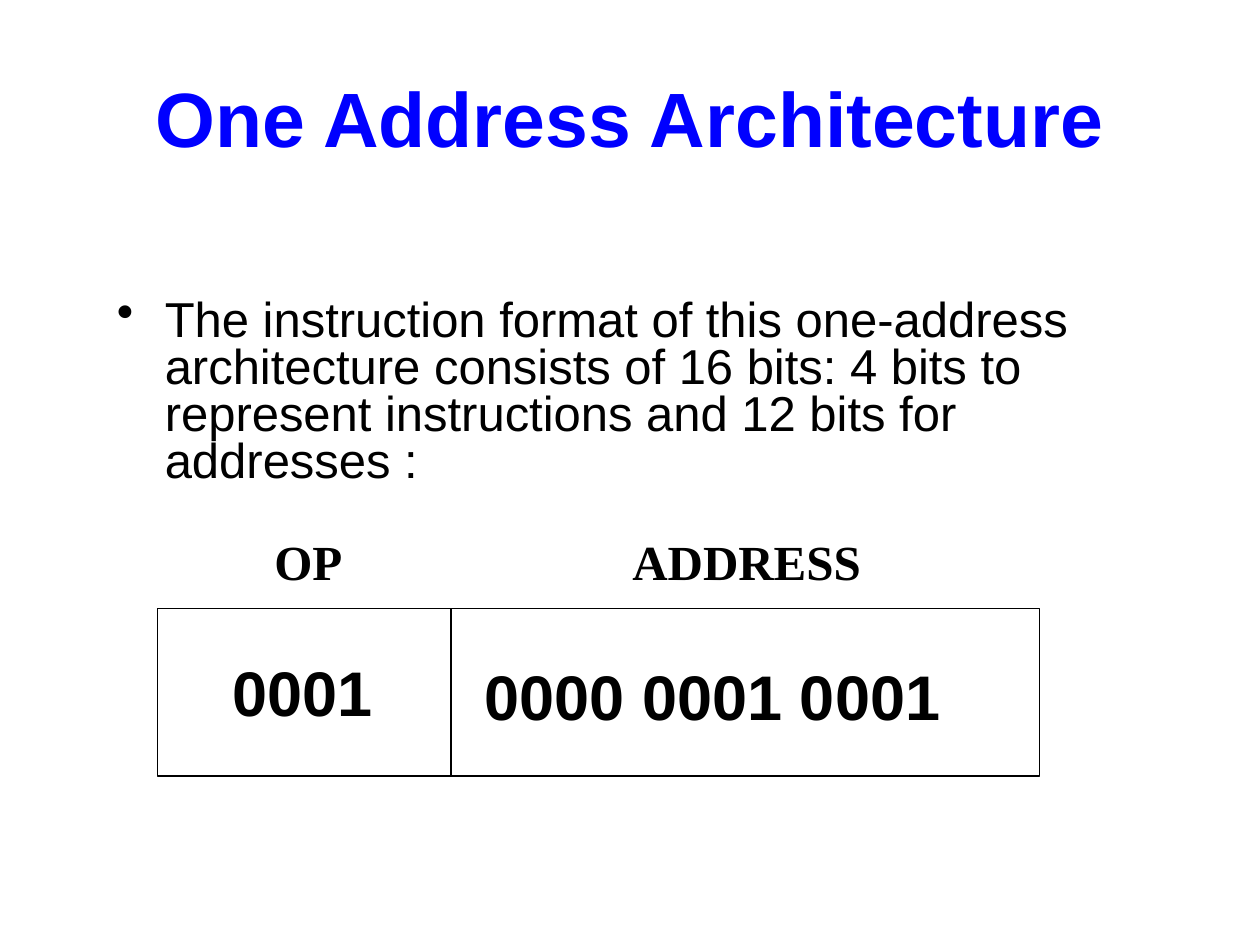
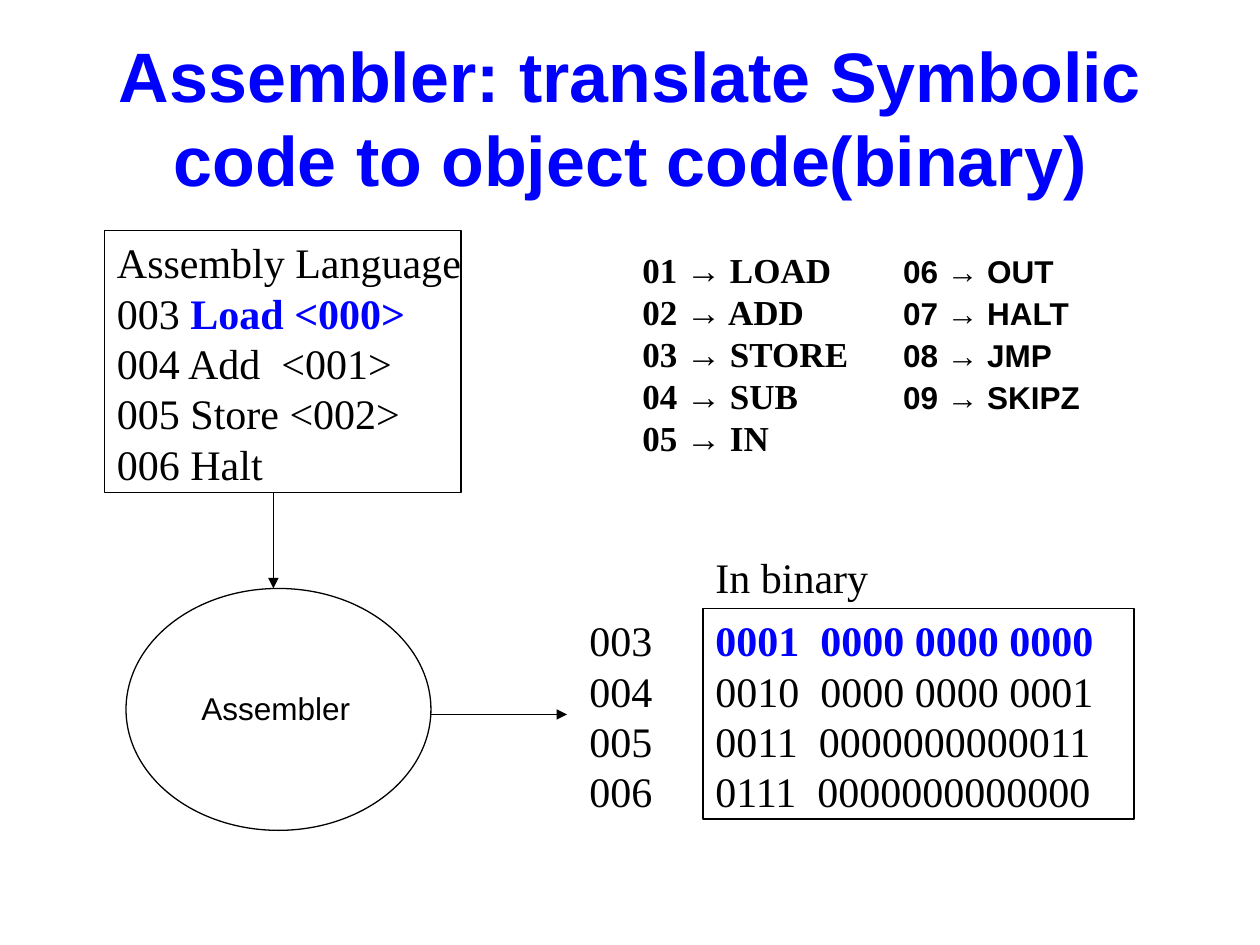
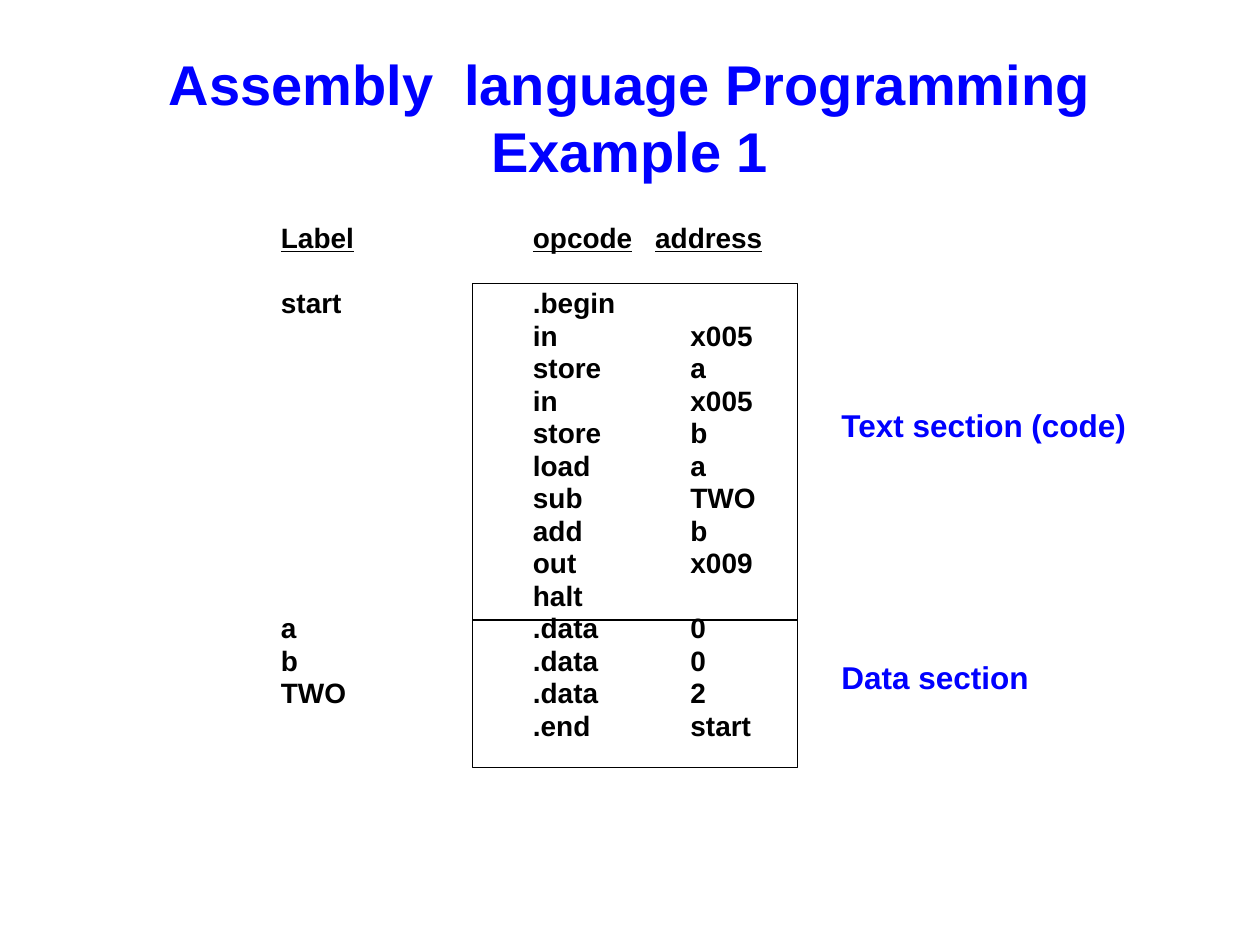
"""Build three slides on one-address architecture and its assembler."""

from dataclasses import dataclass

from lxml.etree import SubElement
from pptx import Presentation
from pptx.dml.color import RGBColor
from pptx.enum.shapes import MSO_CONNECTOR, MSO_SHAPE
from pptx.enum.text import MSO_ANCHOR, PP_ALIGN
from pptx.oxml.ns import qn
from pptx.util import Inches, Pt


@dataclass(frozen=True)
class Theme:
    sans: str = "Arial"
    serif: str = "Times New Roman"
    black: RGBColor = RGBColor(0, 0, 0)
    blue: RGBColor = RGBColor(0, 0, 255)
    white: RGBColor = RGBColor(255, 255, 255)
    line_width: float = 0.75
    line_spacing: float = 0.8
    word: int = 36
    body: int = 28
    code: int = 24
    opcode: int = 20
    label: int = 18
    listing: int = 16


theme = Theme()


def add_text(slide, box, lines, size, font=theme.sans, color=theme.black,
             bold=False, wrap=False, tabs=(), bullet=None):
    """Add a text box whose lines are tuples of runs and return its frame."""
    frame = slide.shapes.add_textbox(*map(Inches, box)).text_frame
    frame.word_wrap = wrap
    for index, line in enumerate(lines):
        paragraph = frame.paragraphs[0] if index == 0 else frame.add_paragraph()
        for text in line:
            paragraph.add_run().text = text
        properties = paragraph._p.get_or_add_pPr()
        if bullet:
            properties.set("marL", str(Inches(0.38)))
            properties.set("indent", str(-Inches(0.38)))
            SubElement(properties, qn("a:buChar"), char=bullet)
        if tabs:
            tab_list = SubElement(properties, qn("a:tabLst"))
            for position in tabs:
                SubElement(tab_list, qn("a:tab"), pos=str(Inches(position)), algn="l")
        paragraph.font.name = font
        paragraph.font.size = Pt(size)
        paragraph.font.bold = bold
        paragraph.font.color.rgb = color
    return frame


def add_outline(slide, kind, box):
    """Add an unfilled shape with a thin black line."""
    shape = slide.shapes.add_shape(kind, *map(Inches, box))
    shape.shadow.inherit = False
    shape.fill.background()
    shape.line.color.rgb = theme.black
    shape.line.width = Pt(theme.line_width)
    return shape


presentation = Presentation()
presentation.slide_width = Inches(10)
presentation.slide_height = Inches(7.5)

titles = [
    ("One Address Architecture", 44),
    ("Assembler: translate Symbolic code to object code(binary)", 40),
    ("Assembly  language Programming Example 1", 32),
]
slides = []
for title, size in titles:
    slide = presentation.slides.add_slide(presentation.slide_layouts[6])
    frame = add_text(slide, (0.5, 0.3, 9, 1.25), [(title,)], size,
                     color=theme.blue, bold=True, wrap=True)
    frame.vertical_anchor = MSO_ANCHOR.MIDDLE
    frame.paragraphs[0].alignment = PP_ALIGN.CENTER
    slides.append(slide)
format_slide, assembler_slide, program_slide = slides

frame = add_text(
    format_slide, (0.83, 2.33, 8.7, 2.08),
    [("The instruction format of this one-address architecture consists of 16 bits: "
      "4 bits to represent instructions and 12 bits for addresses :",)],
    theme.body, wrap=True, bullet="•")
frame.paragraphs[0].line_spacing = theme.line_spacing
instruction_word = add_outline(format_slide, MSO_SHAPE.RECTANGLE, (1.25, 4.83, 7, 1.33))
instruction_word.fill.solid()
instruction_word.fill.fore_color.rgb = theme.white
for text, box, size, font in [
    ("OP", (2.08, 4.17, 0.74, 0.57), theme.body, theme.serif),
    ("ADDRESS", (4.92, 4.17, 2.02, 0.57), theme.body, theme.serif),
    ("0001", (1.75, 5.14, 1.4, 0.7), theme.word, theme.sans),
    ("0000 0001 0001", (3.75, 5.17, 4.2, 0.7), theme.word, theme.sans),
]:
    add_text(format_slide, box, [(text,)], size, font, bold=True, wrap=size == theme.word)

source_code = add_text(
    assembler_slide, (0.83, 1.83, 2.93, 2.1),
    [("Assembly Language",), ("003 ", "Load <000>"), ("004 Add  <001>",),
     ("005 Store <002>",), ("006 Halt",)],
    theme.code, theme.serif)
object_code = add_text(
    assembler_slide, (4.58, 4.83, 4.58, 1.7),
    [("003\t", "0001  0000 0000 0000"), ("004\t0010  0000 0000 0001",),
     ("005\t0011  0000000000011",), ("006\t0111  0000000000000",)],
    theme.code, theme.serif, wrap=True, tabs=[1])
for run in (source_code.paragraphs[1].runs[1], object_code.paragraphs[0].runs[1]):
    run.font.bold = True
    run.font.color.rgb = theme.blue
add_text(assembler_slide, (5.58, 4.33, 1.41, 0.5), [("In binary",)],
         theme.code, theme.serif)

opcodes = add_text(
    assembler_slide, (5, 1.92, 4.2, 3.17),
    [("01 → LOAD\t", "06 → OUT"), ("02 → ADD\t", "07 → HALT"),
     ("03 → STORE\t", "08 → JMP"), ("04 → SUB\t", "09 → SKIPZ"), ("05 → IN",)],
    theme.opcode, theme.serif, bold=True, wrap=True, tabs=[2.07])
for paragraph in opcodes.paragraphs:
    for run in paragraph.runs[1:]:
        run.font.name = theme.sans
        run.font.size = Pt(theme.label)

for kind, box in [
    (MSO_SHAPE.RECTANGLE, (5.58, 4.83, 3.42, 1.67)),
    (MSO_SHAPE.RECTANGLE, (0.83, 1.83, 2.83, 2.08)),
    (MSO_SHAPE.OVAL, (1, 4.67, 2.42, 1.92)),
]:
    add_outline(assembler_slide, kind, box)
add_text(assembler_slide, (1.5, 5.42, 1.38, 0.4), [("Assembler",)], theme.label)

program = [
    ("start", ".begin", ""),
    ("", "in", "x005"),
    ("", "store", "a"),
    ("", "in", "x005"),
    ("", "store", "b"),
    ("", "load", "a"),
    ("", "sub", "TWO"),
    ("", "add", "b"),
    ("", "out", "x009"),
    ("", "halt", ""),
    ("a", ".data", "0"),
    ("b", ".data", "0"),
    ("TWO", ".data", "2"),
    ("", ".end", "start"),
]
header = ("Label", "\t", "opcode", "\t", "address")
rows = [("\t".join(row).rstrip(),) for row in program]
frame = add_text(program_slide, (1.75, 1.75, 5.58, 0.4), [header], theme.listing,
                 bold=True, wrap=True, tabs=[2, 2.97])
frame.margin_left = Inches(0.48)
for run in frame.paragraphs[0].runs[::2]:
    run.font.underline = True
frame.paragraphs[0].line_spacing = theme.line_spacing
frame = add_text(program_slide, (1.75, 2.27, 5.58, 4.43), rows, theme.listing,
                 bold=True, wrap=True, tabs=[2, 3.25])
frame.margin_left = Inches(0.48)
for index, paragraph in enumerate(frame.paragraphs):
    paragraph.line_spacing = theme.line_spacing
    paragraph.space_before = Pt(3.2 if index else 0)

for text, box, top, height in [
    ("Data section", (6.58, 5.17, 1.69, 0.4), 4.92, 1.17),
    ("Text section (code)", (6.58, 3.17, 2.55, 0.4), 2.25, 2.67),
]:
    add_outline(program_slide, MSO_SHAPE.RECTANGLE, (3.75, top, 2.58, height))
    add_text(program_slide, box, [(text,)], theme.label, color=theme.blue, bold=True)

for slide, ends, arrow in [
    (format_slide, (3.58, 4.83, 3.58, 6.16), False),
    (assembler_slide, (2.17, 3.91, 2.17, 4.67), True),
    (assembler_slide, (3.42, 5.67, 4.5, 5.67), True),
]:
    connector = slide.shapes.add_connector(MSO_CONNECTOR.STRAIGHT, *map(Inches, ends))
    connector.line.color.rgb = theme.black
    connector.line.width = Pt(theme.line_width)
    if arrow:
        SubElement(connector.line._get_or_add_ln(), qn("a:tailEnd"), type="triangle")
    SubElement(connector._element.spPr, qn("a:effectLst"))

presentation.save("out.pptx")
